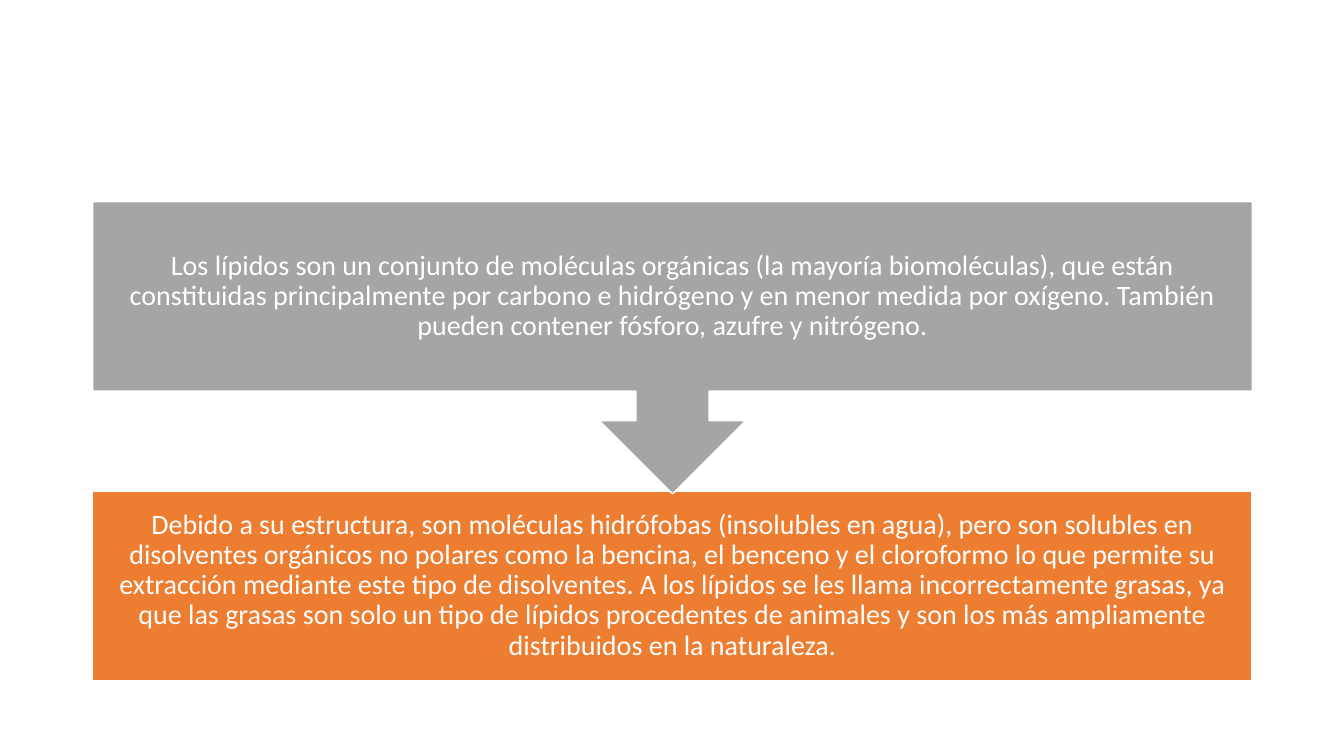
from dataclasses import dataclass

from pptx import Presentation
from pptx.dml.color import RGBColor
from pptx.enum import shapes, text
from pptx.util import Emu, Pt

EMU_PER_PX = 9144  # 100 px to the inch


@dataclass(frozen=True)
class Theme:
    white: RGBColor = RGBColor(0xFF, 0xFF, 0xFF)
    gray: RGBColor = RGBColor(0xA5, 0xA5, 0xA5)
    orange: RGBColor = RGBColor(0xED, 0x7D, 0x31)
    font: str = "Calibri"
    body_size: Pt = Pt(20)
    outline: Pt = Pt(1)


THEME = Theme()

DEFINITION = (
    "Los lípidos son un conjunto de moléculas orgánicas (la mayoría biomoléculas), "
    "que están constituidas principalmente por carbono e hidrógeno y en menor medida "
    "por oxígeno. También pueden contener fósforo, azufre y nitrógeno."
)
SOLUBILITY = (
    "Debido a su estructura, son moléculas hidrófobas (insolubles en agua), pero son "
    "solubles en disolventes orgánicos no polares como la bencina, el benceno y el "
    "cloroformo lo que permite su extracción mediante este tipo de disolventes. A los "
    "lípidos se les llama incorrectamente grasas, ya que las grasas son solo un tipo de "
    "lípidos procedentes de animales y son los más ampliamente distribuidos en la "
    "naturaleza."
)


def px(n):
    return Emu(n * EMU_PER_PX)


def add_step(slide, kind, box, color, words):
    """One filled step with centred text."""
    sp = slide.shapes.add_shape(kind, *map(px, box))
    sp.shadow.inherit = False
    sp.fill.solid()
    sp.fill.fore_color.rgb = color
    sp.line.color.rgb = THEME.white
    sp.line.width = THEME.outline

    tf = sp.text_frame
    tf.word_wrap = True
    tf.vertical_anchor = text.MSO_ANCHOR.MIDDLE
    tf.margin_left = tf.margin_right = tf.margin_top = tf.margin_bottom = px(16)
    p = tf.paragraphs[0]
    p.text = words
    p.alignment = text.PP_ALIGN.CENTER
    p.line_spacing = 0.9
    p.font.name = THEME.font
    p.font.size = THEME.body_size
    p.font.color.rgb = THEME.white
    return sp


def add_process(slide, box):
    """Two stacked steps; the upper one points down at the lower one."""
    left, top, width, height = box
    step_height, callout_height = 188, 290

    # Lower step goes first, so the arrow tip lies over its edge
    add_step(slide, shapes.MSO_SHAPE.RECTANGLE,
             (left, top + height - step_height, width, step_height),
             THEME.orange, SOLUBILITY)

    # Upper step with its arrow
    callout = add_step(slide, shapes.MSO_SHAPE.DOWN_ARROW_CALLOUT,
                       (left, top, width, callout_height),
                       THEME.gray, DEFINITION)
    callout.adjustments[3] = step_height / callout_height


def main():
    prs = Presentation()
    prs.slide_width, prs.slide_height = px(1333), px(750)
    slide = prs.slides.add_slide(prs.slide_layouts[6])
    add_process(slide, (92, 200, 1150, 475))
    prs.save("out.pptx")


if __name__ == "__main__":
    main()
